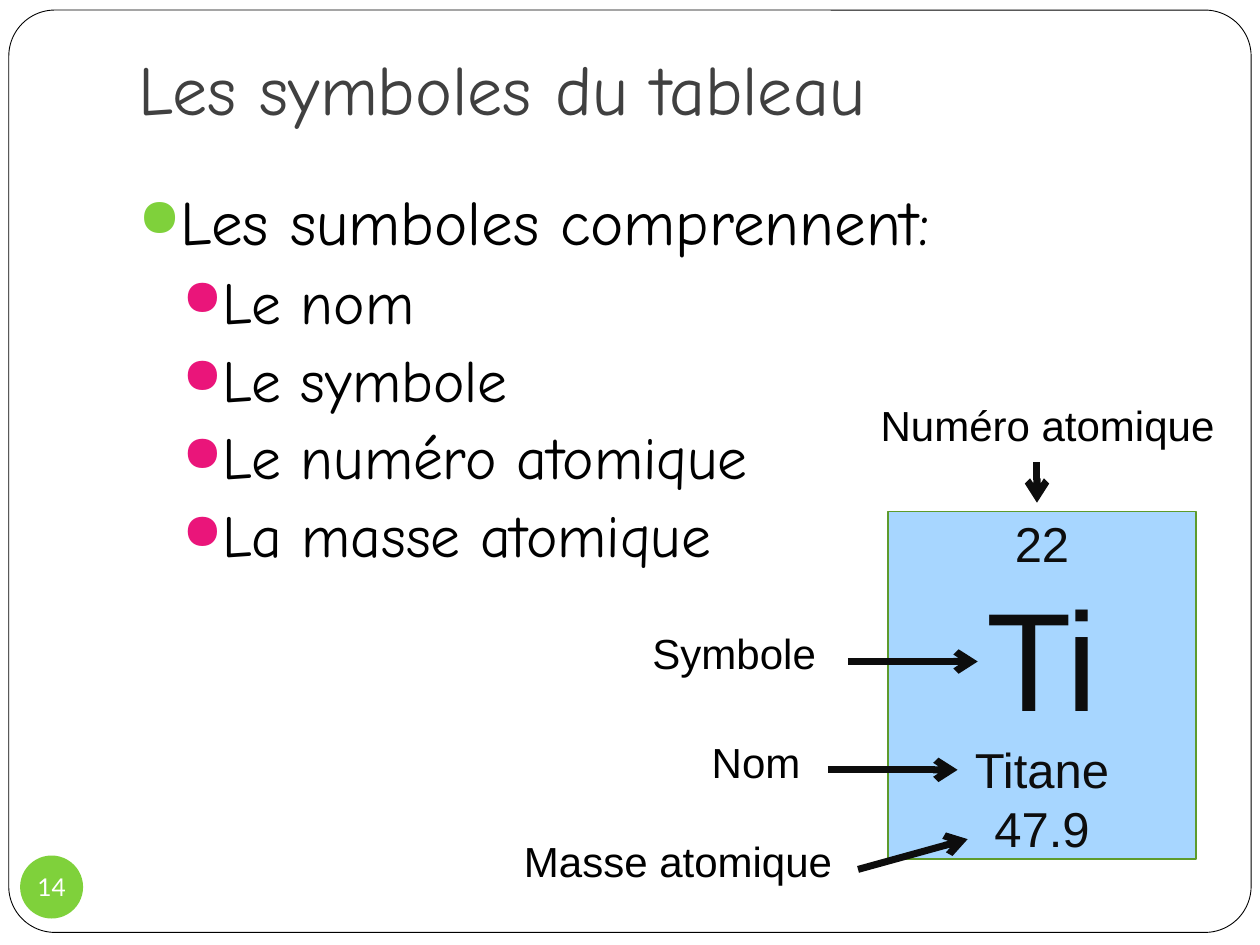
from lxml import etree
from pptx import Presentation
from pptx.dml.color import RGBColor
from pptx.enum.shapes import MSO_CONNECTOR, MSO_SHAPE
from pptx.enum.text import MSO_ANCHOR, MSO_AUTO_SIZE, PP_ALIGN
from pptx.oxml.ns import qn
from pptx.util import Inches, Pt

TOP, MID = MSO_ANCHOR.TOP, MSO_ANCHOR.MIDDLE
LEFT, CENTER = PP_ALIGN.LEFT, PP_ALIGN.CENTER
RECT, ROUND, OVAL = MSO_SHAPE.RECTANGLE, MSO_SHAPE.ROUNDED_RECTANGLE, MSO_SHAPE.OVAL
LINE = MSO_CONNECTOR.STRAIGHT

THEME = {
    "hand": "Comic Neue", "sans": "Arial", "num": "Lato",
    "white": "FFFFFF", "black": "000000", "ink": "0D0D0D", "gray": "404040",
    "green": "7FD13B", "pink": "EA157A", "blue": "A7D6FF", "edge": "5E9B2C",
    "title": 40, "lead": 36, "item": 34, "label": 24, "cell": 28, "sign": 80, "page": 14,
}

TITLE = "Les symboles du tableau"
LEAD = "Les sumboles comprennent:"
ITEMS = ["Le nom", "Le symbole", "Le numéro atomique", "La masse atomique"]
CELL = [("22", "cell"), ("Ti", "sign"), ("Titane", "cell"), ("47.9", "cell")]
LABELS = [
    ("Numéro atomique", (6.89, 3.12, 2.88), (8.23, 3.67, 8.23, 3.99)),
    ("Symbole", (5.08, 4.93, 1.51), (6.73, 5.25, 7.76, 5.25)),
    ("Masse atomique", (4.06, 6.58, 2.67), (6.81, 6.9, 7.68, 6.66)),
    ("Nom", (5.55, 5.8, 0.91), (6.57, 6.11, 7.6, 6.11)),
]
PAGE = "14"


def tint(name):
    return RGBColor.from_string(THEME[name])


def write(frame, text, size, font="sans", color="black", align=LEFT,
          first=False, before=0, dot=None, indent=0, hang=0):
    par = frame.paragraphs[0] if first else frame.add_paragraph()
    par.alignment, par.space_before = align, Pt(before)
    run = par.add_run()
    run.text = text
    run.font.name, run.font.size = THEME[font], Pt(THEME[size])
    run.font.color.rgb = tint(color)
    if dot:
        props = par._p.get_or_add_pPr()
        props.set("marL", str(Inches(indent)))
        props.set("indent", str(-Inches(hang)))
        hue = etree.SubElement(props, qn("a:buClr"))
        etree.SubElement(hue, qn("a:srgbClr"), val=THEME[dot])
        etree.SubElement(props, qn("a:buSzPct"), val="85000")
        etree.SubElement(props, qn("a:buChar"), char="●")


def shape(slide, kind, box, fill, line=None, width=1):
    item = slide.shapes.add_shape(kind, *map(Inches, box))
    item.shadow.inherit = False
    item.fill.solid()
    item.fill.fore_color.rgb = tint(fill)
    if line:
        item.line.color.rgb, item.line.width = tint(line), Pt(width)
    else:
        item.line.fill.background()
    item.text_frame.vertical_anchor = MID
    return item


def label(slide, box, wrap):
    frame = slide.shapes.add_textbox(*map(Inches, box)).text_frame
    frame.word_wrap = wrap
    return frame


def arrow(slide, ends):
    link = slide.shapes.add_connector(LINE, *map(Inches, ends))
    link.line.color.rgb, link.line.width = tint("ink"), Pt(4)
    etree.SubElement(link.line._get_or_add_ln(), qn("a:tailEnd"), type="arrow")
    etree.SubElement(link._element.spPr, qn("a:effectLst"))


def main():
    deck = Presentation()
    deck.slide_width, deck.slide_height = Inches(10), Inches(7.5)
    slide = deck.slides.add_slide(deck.slide_layouts[5])

    border = shape(slide, ROUND, (0.07, 0.08, 9.86, 7.32), "white", "black", 0.5)
    border.adjustments[0] = 0.05
    slide.shapes._spTree.insert(2, border._element)

    head = slide.shapes.title
    head.left, head.top, head.width, head.height = map(Inches, (1, 0.31, 7.07, 0.9))
    frame = head.text_frame
    frame.word_wrap, frame.vertical_anchor = True, TOP
    frame.auto_size = MSO_AUTO_SIZE.NONE
    write(frame, TITLE, "title", "hand", "gray", first=True, before=5.8)

    frame = label(slide, (1, 1.4, 7.07, 3.53), True)
    write(frame, LEAD, "lead", "hand", first=True, before=5.8,
          dot="green", indent=0.3, hang=0.3)
    for text in ITEMS:
        write(frame, text, "item", "hand", before=3.7,
              dot="pink", indent=0.6, hang=0.25)

    frame = shape(slide, RECT, (7.05, 4.06, 2.44, 2.76), "blue", "edge").text_frame
    for i, (text, size) in enumerate(CELL):
        write(frame, text, size, color="ink", align=CENTER, first=i == 0)

    for text, spot, ends in LABELS:
        write(label(slide, (*spot, 0.5), False), text, "label", first=True)
        arrow(slide, ends)

    frame = shape(slide, OVAL, (0.16, 6.79, 0.5, 0.5), "green").text_frame
    frame.word_wrap = False
    frame.margin_left = frame.margin_right = frame.margin_top = frame.margin_bottom = 0
    write(frame, PAGE, "page", "num", "white", CENTER, first=True)

    deck.save("out.pptx")


if __name__ == "__main__":
    main()
